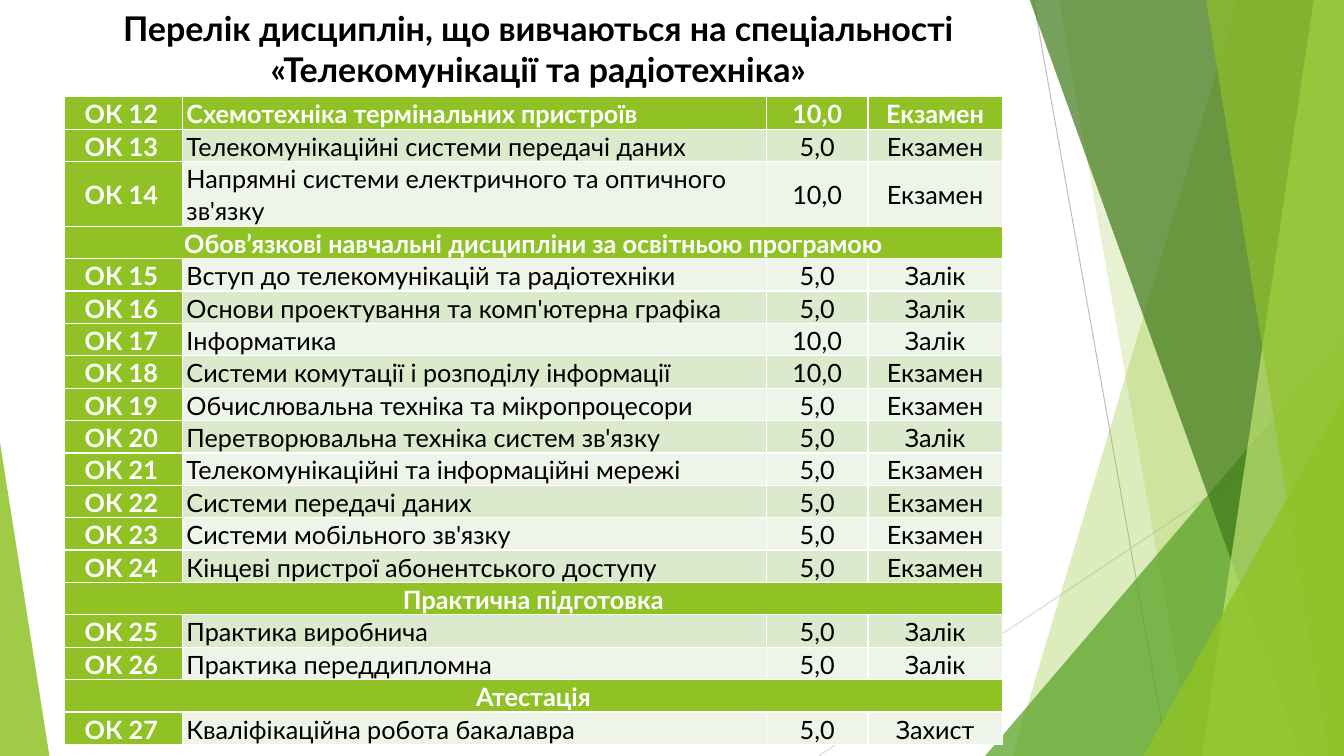
from lxml.etree import SubElement
from pptx import Presentation
from pptx.dml.color import RGBColor
from pptx.enum.shapes import MSO_CONNECTOR, MSO_SHAPE
from pptx.enum.text import MSO_ANCHOR, MSO_AUTO_SIZE, PP_ALIGN
from pptx.oxml.ns import qn
from pptx.util import Inches, Pt

WHITE = RGBColor(0xFF, 0xFF, 0xFF)
BLACK = RGBColor(0x00, 0x00, 0x00)
GREEN = RGBColor(0x90, 0xC2, 0x26)
LEAF = RGBColor(0x54, 0xA0, 0x21)
FOREST = RGBColor(0x3F, 0x78, 0x19)
LIME = RGBColor(0xC0, 0xE4, 0x74)
DARK_BAND = RGBColor(0xDB, 0xE9, 0xCD)
LIGHT_BAND = RGBColor(0xEE, 0xF4, 0xE8)
GREY = RGBColor(0xBF, 0xBF, 0xBF)
PALE_GREY = RGBColor(0xD9, 0xD9, 0xD9)
FONT = "Lato"

TITLE = "Перелік дисциплін, що вивчаються на спеціальності «Телекомунікації та радіотехніка»"
COLUMN_WIDTHS = (1.17, 5.79, 1.01, 1.33)
ROW_HEIGHT = 0.32
COURSES = [
    ("ОК 12", "Схемотехніка термінальних пристроїв", "10,0", "Екзамен"),
    ("ОК 13", "Телекомунікаційні системи передачі даних", "5,0", "Екзамен"),
    ("ОК 14", "Напрямні системи електричного та оптичного зв'язку", "10,0", "Екзамен"),
    ("Обов’язкові навчальні дисципліни за освітньою програмою",),
    ("ОК 15", "Вступ до телекомунікацій та радіотехніки", "5,0", "Залік"),
    ("ОК 16", "Основи проектування та комп'ютерна графіка", "5,0", "Залік"),
    ("ОК 17", "Інформатика", "10,0", "Залік"),
    ("ОК 18", "Системи комутації і розподілу інформації", "10,0", "Екзамен"),
    ("ОК 19", "Обчислювальна техніка та мікропроцесори", "5,0", "Екзамен"),
    ("ОК 20", "Перетворювальна техніка систем зв'язку", "5,0", "Залік"),
    ("ОК 21", "Телекомунікаційні та інформаційні мережі", "5,0", "Екзамен"),
    ("ОК 22", "Системи передачі даних", "5,0", "Екзамен"),
    ("ОК 23", "Системи мобільного зв'язку", "5,0", "Екзамен"),
    ("ОК 24", "Кінцеві пристрої абонентського доступу", "5,0", "Екзамен"),
    ("Практична підготовка",),
    ("ОК 25", "Практика виробнича", "5,0", "Залік"),
    ("ОК 26", "Практика переддипломна", "5,0", "Залік"),
    ("Атестація",),
    ("ОК 27", "Кваліфікаційна робота бакалавра", "5,0", "Захист"),
]


def style_facet(shape, color, opacity):
    """Give a facet a translucent fill without outline or shadow."""
    shape.shadow.inherit = False
    shape.fill.solid()
    shape.fill.fore_color.rgb = color
    shape.line.fill.background()
    color_element = shape.element.find(".//" + qn("a:srgbClr"))
    SubElement(color_element, qn("a:alpha"), val=str(opacity * 1000))


def add_ray(shapes, start, end, color):
    """Draw one thin background line."""
    points = [Inches(value) for value in (*start, *end)]
    ray = shapes.add_connector(MSO_CONNECTOR.STRAIGHT, *points)
    ray.line.color.rgb = color
    ray.line.width = Pt(0.75)
    SubElement(ray.element.spPr, qn("a:effectLst"))


def add_band(shapes, right, top, bottom, insets, color, opacity):
    """Draw a full-height band from a slanted edge to the right side."""
    top_inset, bottom_inset = insets
    corners = [(right - top_inset, top), (right, top),
               (right, bottom), (right - bottom_inset, bottom)]
    start, *others = [(Inches(x), Inches(y)) for x, y in corners]
    builder = shapes.build_freeform(*start)
    builder.add_line_segments(others, close=True)
    style_facet(builder.convert_to_shape(), color, opacity)


def add_corner(shapes, left, bottom, width, height, peak, color, opacity):
    """Draw a right triangle standing on the bottom edge."""
    corner = shapes.add_shape(MSO_SHAPE.ISOSCELES_TRIANGLE, Inches(left),
                              Inches(bottom - height), Inches(width), Inches(height))
    corner.adjustments[0] = peak
    style_facet(corner, color, opacity)


def add_facets(slide, left, top, width, height):
    """Build the faceted green decoration in the given box."""
    shapes = slide.shapes.add_group_shape().shapes
    right, bottom = left + width, top + height
    band_box = (right, top - 0.01, bottom)
    add_ray(shapes, (right - 3.08, top), (right - 1.75, bottom), GREY)
    add_ray(shapes, (right, top + 4.03), (right - 5.21, bottom), PALE_GREY)
    add_band(shapes, *band_box, (1.05, 3.29), GREEN, 30)
    add_band(shapes, *band_box, (2.83, 1.5), GREEN, 20)
    add_corner(shapes, right - 3.56, bottom, 3.56, 4.17, 1, LEAF, 72)
    add_band(shapes, *band_box, (3.12, 0.42), FOREST, 70)
    add_band(shapes, *band_box, (0.3, 1.41), LIME, 70)
    add_band(shapes, *band_box, (1.37, 0.15), GREEN, 65)
    add_corner(shapes, right - 1.99, bottom, 1.99, 3.57, 1, GREEN, 80)
    add_corner(shapes, left, bottom, 0.49, 3.11, 0, GREEN, 85)


def set_font(paragraph, size, color, bold):
    """Set the font of a whole paragraph."""
    paragraph.font.name = FONT
    paragraph.font.size = Pt(size)
    paragraph.font.color.rgb = color
    paragraph.font.bold = bold


def add_title(slide, left, top, width, height):
    """Place the heading in the title placeholder."""
    title = slide.shapes.title
    title.left, title.top = Inches(left), Inches(top)
    title.width, title.height = Inches(width), Inches(height)
    frame = title.text_frame
    frame.text = TITLE
    frame.word_wrap = True
    frame.auto_size = MSO_AUTO_SIZE.NONE
    frame.vertical_anchor = MSO_ANCHOR.MIDDLE
    paragraph = frame.paragraphs[0]
    paragraph.alignment = PP_ALIGN.CENTER
    set_font(paragraph, 24.3, BLACK, True)


def fill_cell(cell, text, background, strong, alignment, indent):
    """Write and format one table cell."""
    cell.text = text
    cell.fill.solid()
    cell.fill.fore_color.rgb = background
    cell.margin_left, cell.margin_right = Inches(0.04 + indent), Inches(0.04)
    cell.margin_top = cell.margin_bottom = 0
    cell.vertical_anchor = MSO_ANCHOR.MIDDLE
    paragraph = cell.text_frame.paragraphs[0]
    paragraph.alignment = alignment
    paragraph.line_spacing = 1.07
    paragraph.space_after = Pt(8)
    set_font(paragraph, 18, WHITE if strong else BLACK, strong)


def add_courses(slide, left, top, width, height):
    """Build the course table with its merged section rows."""
    frame = slide.shapes.add_table(len(COURSES), len(COLUMN_WIDTHS), Inches(left),
                                   Inches(top), Inches(width), Inches(height))
    table = frame.table
    table.first_col = True
    for column, column_width in zip(table.columns, COLUMN_WIDTHS):
        column.width = Inches(column_width)
    for row_index, course in enumerate(COURSES):
        table.rows[row_index].height = Inches(ROW_HEIGHT)
        is_section = len(course) == 1
        if is_section:
            table.cell(row_index, 0).merge(table.cell(row_index, len(COLUMN_WIDTHS) - 1))
        band = DARK_BAND if row_index % 2 else LIGHT_BAND
        for column_index, text in enumerate(course):
            strong = row_index == 0 or column_index == 0
            centred = is_section or column_index > 1
            fill_cell(table.cell(row_index, column_index), text,
                      GREEN if strong else band, strong,
                      PP_ALIGN.CENTER if centred else PP_ALIGN.LEFT,
                      0.16 if column_index == 0 and not is_section else 0)


def main():
    """Create the presentation with the course list slide."""
    presentation = Presentation()
    presentation.slide_width, presentation.slide_height = Inches(13.33), Inches(7.5)
    slide = presentation.slides.add_slide(presentation.slide_layouts[5])
    add_facets(slide, 0, 0, 13.33, 7.5)
    add_title(slide, 0.64, 0, 9.4, 0.96)
    add_courses(slide, 0.64, 0.96, sum(COLUMN_WIDTHS), ROW_HEIGHT * len(COURSES))
    presentation.save("out.pptx")


if __name__ == "__main__":
    main()
